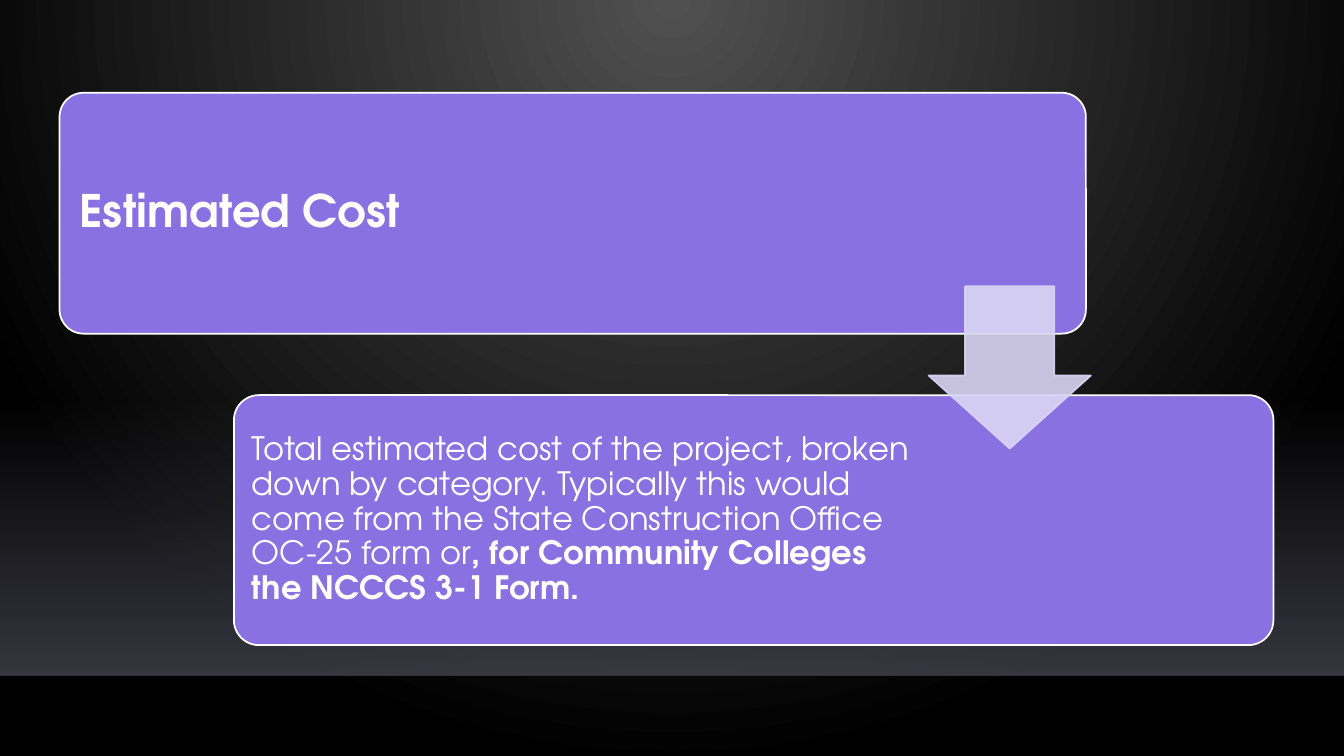
from lxml import etree
from pptx import Presentation
from pptx.dml.color import RGBColor
from pptx.enum.shapes import MSO_CONNECTOR, MSO_SHAPE as SHAPE
from pptx.enum.text import MSO_ANCHOR, MSO_AUTO_SIZE, PP_ALIGN
from pptx.oxml import parse_xml
from pptx.oxml.ns import nsdecls, qn
from pptx.util import Inches, Pt

FONT = "TeX Gyre Adventor"
WHITE, PURPLE, LAVENDER = "FFFFFF", "8971E1", "DAD5F4"
WIDTH, HEIGHT = 13.33, 7.5
FLOOR_Y = 6.71


def rgb(color):
    return RGBColor.from_string(color)


def set_alpha(fill_parent, percent):
    """Make the solid colour under fill_parent partly transparent."""
    color = fill_parent.find(qn("a:solidFill"))[0]
    etree.SubElement(color, qn("a:alpha")).set("val", str(percent * 1000))


def set_gradient(fill, parent, stops, direction):
    """Give parent a gradient of (position, colour, alpha) stops."""
    fill.gradient()
    gs = "".join(
        f'<a:gs pos="{pos * 1000}"><a:srgbClr val="{color}">'
        f'<a:alpha val="{alpha * 1000}"/></a:srgbClr></a:gs>'
        for pos, color, alpha in stops)
    grad = parse_xml(f'<a:gradFill {nsdecls("a")} rotWithShape="1">'
                     f'<a:gsLst>{gs}</a:gsLst>{direction}</a:gradFill>')
    parent.replace(parent.find(qn("a:gradFill")), grad)


def add_backdrop(s):
    set_gradient(s.background.fill, s.element.find(".//" + qn("p:bgPr")),
                 [(0, "505050", 100), (100, "000000", 100)],
                 '<a:path path="circle"><a:fillToRect l="43000" t="0" '
                 'r="43000" b="100000"/></a:path>')
    glow = s.shapes.add_shape(SHAPE.RECTANGLE, 0, Inches(3.96),
                              Inches(WIDTH), Inches(2.74))
    glow.shadow.inherit = False
    glow.line.fill.background()
    set_gradient(glow.fill, glow.element.spPr,
                 [(0, "454551", 0), (100, "454551", 80)],
                 '<a:lin ang="5400000" scaled="0"/>')
    floor = s.shapes.add_connector(MSO_CONNECTOR.STRAIGHT, 0, Inches(FLOOR_Y),
                                   Inches(WIDTH), Inches(FLOOR_Y))
    floor.line.color.rgb = rgb("000001")
    floor.line.width = Pt(1)
    set_alpha(floor.line._get_or_add_ln(), 20)
    etree.SubElement(floor.element.spPr, qn("a:effectLst"))


def add_block(s, preset, box, adjustments, fill, line):
    sp = s.shapes.add_shape(preset, *map(Inches, box))
    for i, value in enumerate(adjustments):
        sp.adjustments[i] = value
    sp.shadow.inherit = False
    sp.fill.solid()
    sp.fill.fore_color.rgb = rgb(fill)
    sp.line.color.rgb = rgb(line)
    sp.line.width = Pt(1.25)
    return sp


def write_text(sp, box, runs, size, inset):
    """Place sp and fill it with one paragraph of (text, bold) runs."""
    sp.left, sp.top, sp.width, sp.height = map(Inches, box)
    tf = sp.text_frame
    tf.word_wrap = True
    tf.auto_size = MSO_AUTO_SIZE.NONE
    tf.vertical_anchor = MSO_ANCHOR.MIDDLE
    tf.margin_left = tf.margin_right = Inches(inset)
    tf.margin_top = tf.margin_bottom = Inches(inset)
    p = tf.paragraphs[0]
    p.alignment = PP_ALIGN.LEFT
    p.line_spacing = 0.9
    p.font.name = FONT
    p.font.size = Pt(size)
    p.font.color.rgb = rgb(WHITE)
    for text, bold in runs:
        r = p.add_run()
        r.text = text
        r.font.bold = bold


def main():
    prs = Presentation()
    prs.slide_width, prs.slide_height = Inches(WIDTH), Inches(HEIGHT)
    s = prs.slides.add_slide(prs.slide_layouts[5])
    add_backdrop(s)

    add_block(s, SHAPE.ROUNDED_RECTANGLE, (0.59, 0.92, 10.18, 2.39), [0.1],
              PURPLE, WHITE)
    title = s.shapes.title
    write_text(title, (0.66, 0.99, 7.65, 2.25), [("Estimated Cost", True)],
               32, 0.13)
    s.shapes._spTree.append(title.element)  # bring in front of its block

    add_block(s, SHAPE.ROUNDED_RECTANGLE, (2.32, 3.92, 10.31, 2.48), [0.1],
              PURPLE, WHITE)
    details = s.shapes.add_textbox(0, 0, 0, 0)
    write_text(details, (2.4, 3.99, 6.74, 2.33), [
        ("Total estimated cost of the project, broken down by category. "
         "Typically this would come from the State Construction Office "
         "OC-25 form or", False),
        (", for Community Colleges the NCCCS 3-1 Form.", True)], 23, 0.1)

    arrow = add_block(s, SHAPE.DOWN_ARROW, (9.21, 2.84, 1.61, 1.61),
                      [0.55, 0.45], LAVENDER, LAVENDER)
    set_alpha(arrow.element.spPr, 90)
    set_alpha(arrow.line._get_or_add_ln(), 90)

    prs.save("out.pptx")


if __name__ == "__main__":
    main()
